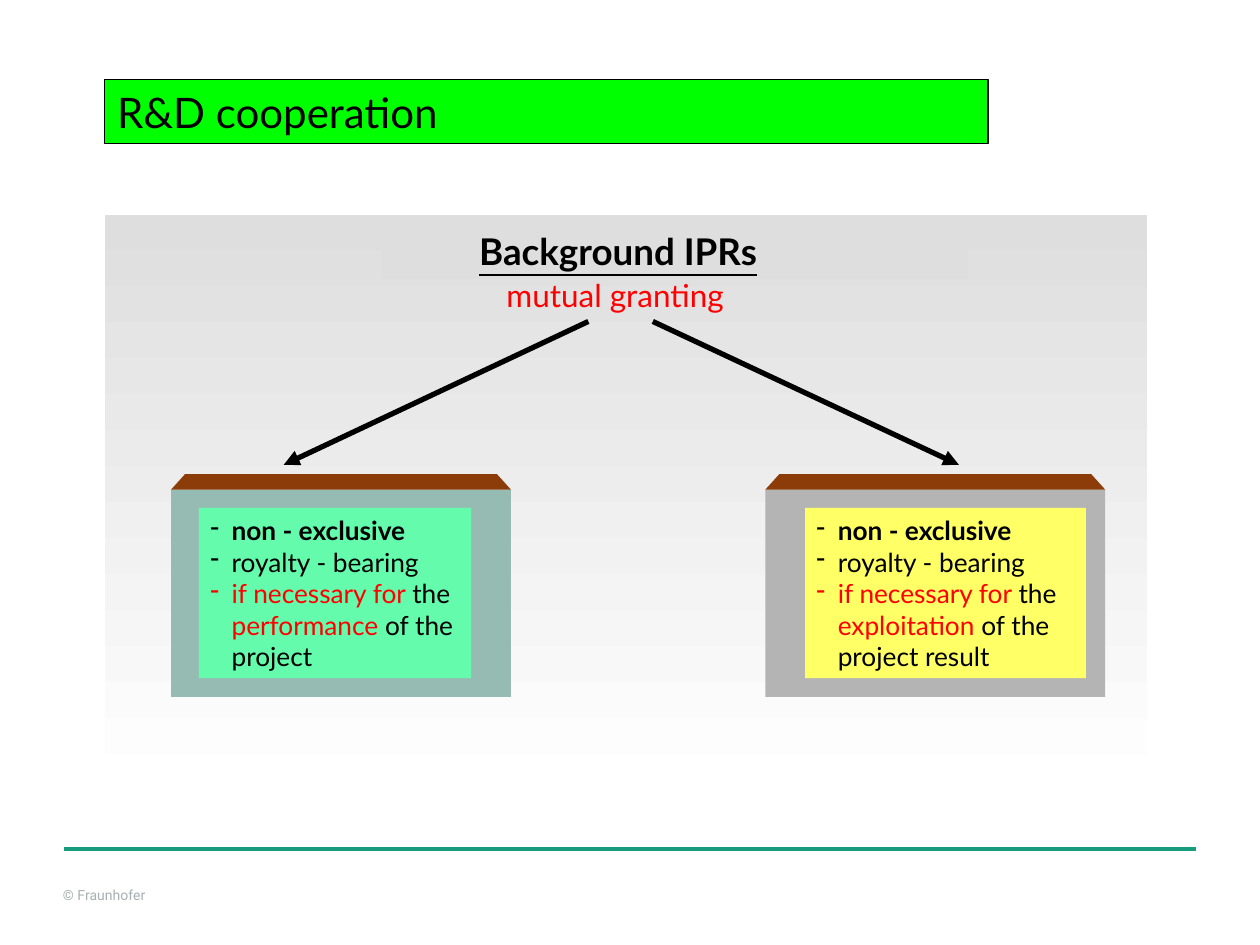
import pptx
import pptx.dml.color
import pptx.enum.shapes
import pptx.enum.text
import pptx.oxml.ns
import pptx.util
from lxml import etree
from pptx.util import Cm

COLORS = {
    "black": "000000", "red": "FF0000", "white": "FFFFFF", "panel": "DEDEDE",
    "title": "00FF00", "rule": "179C7D", "footer": "A8AFAF", "lid": "8B3C08",
    "performance box": "96BBB3", "performance note": "64FCAC",
    "exploitation box": "B4B4B4", "exploitation note": "FFFF66",
}
LID_HEIGHT = 0.31


def rgb(name):
    return pptx.dml.color.RGBColor.from_string(COLORS[name])


def add_child(parent, tag, **attributes):
    return etree.SubElement(parent, pptx.oxml.ns.qn(tag), attributes)


def paint(shape, fill, line=None, line_width=0.75):
    shape.shadow.inherit = False
    shape.fill.solid()
    shape.fill.fore_color.rgb = rgb(fill)
    if line:
        shape.line.color.rgb = rgb(line)
        shape.line.width = pptx.util.Pt(line_width)
    else:
        shape.line.fill.background()


def add_box(slide, left, top, width, height, fill, **outline):
    box = slide.shapes.add_shape(
        pptx.enum.shapes.MSO_SHAPE.RECTANGLE,
        Cm(left), Cm(top), Cm(width), Cm(height))
    paint(box, fill, **outline)
    return box


def add_text_box(slide, left, top, width, height):
    return slide.shapes.add_textbox(Cm(left), Cm(top), Cm(width), Cm(height))


def set_frame(shape, inset_x, inset_y, inset_left=None, wrap=True):
    frame = shape.text_frame
    frame.word_wrap = wrap
    frame.vertical_anchor = pptx.enum.text.MSO_ANCHOR.MIDDLE
    frame.margin_left = Cm(inset_x if inset_left is None else inset_left)
    frame.margin_right = Cm(inset_x)
    frame.margin_top = frame.margin_bottom = Cm(inset_y)
    return frame


def write(paragraph, text, size, color="black", font="Lato", bold=False,
          underline=False):
    paragraph.alignment = pptx.enum.text.PP_ALIGN.LEFT
    run = paragraph.add_run()
    run.text = text
    run.font.size = pptx.util.Pt(size)
    run.font.name = font
    run.font.color.rgb = rgb(color)
    run.font.bold = bold
    run.font.underline = underline


def add_line(slide, start, end, color, width, arrow=False):
    line = slide.shapes.add_connector(
        pptx.enum.shapes.MSO_CONNECTOR.STRAIGHT,
        *(Cm(value) for value in (*start, *end)))
    line.line.color.rgb = rgb(color)
    line.line.width = pptx.util.Pt(width)
    if arrow:
        add_child(line.line._get_or_add_ln(), "a:tailEnd", type="triangle")
    add_child(line._element.spPr, "a:effectLst")


def add_panel(slide):
    panel = add_box(slide, 2.11, 4.32, 21.03, 11.61, "panel",
                    line="white", line_width=1)
    panel.fill.gradient()
    panel.fill.gradient_angle = 270
    for stop, color in zip(panel.fill.gradient_stops, ("panel", "white")):
        stop.color.rgb = rgb(color)


def add_lidded_box(slide, left, fill):
    """Draw a box body with a bevelled lid on top of it."""
    top, width, height, bevel = 9.87, 6.85, 4.18, 0.28
    add_box(slide, left, top, width, height, fill)
    right, lid_top = left + width, top - LID_HEIGHT
    builder = slide.shapes.build_freeform(Cm(left), Cm(top))
    builder.add_line_segments([
        (Cm(left + bevel), Cm(lid_top)), (Cm(right - bevel), Cm(lid_top)),
        (Cm(right), Cm(top))])
    paint(builder.convert_to_shape(), "lid")


def add_conditions(slide, left, width, fill, purpose, subject):
    """List the licence conditions for one purpose as dashed items."""
    note = add_box(slide, left, 10.24, width, 3.43, fill)
    frame = set_frame(note, 0.23, 0.1)
    items = [
        [("non - exclusive", {"bold": True})],
        [("royalty - bearing", {})],
        [("if necessary for ", {"color": "red"}), ("the ", {}),
         (purpose, {"color": "red"}), (f" of the {subject}", {})],
    ]
    for index, item in enumerate(items):
        paragraph = frame.add_paragraph() if index else frame.paragraphs[0]
        properties = paragraph._p.get_or_add_pPr()
        properties.set("marL", str(Cm(0.43)))
        properties.set("indent", str(-Cm(0.43)))
        add_child(properties, "a:buChar", char="-")
        for text, style in item:
            write(paragraph, text, 15, **style)


def main():
    presentation = pptx.Presentation()
    presentation.slide_width, presentation.slide_height = Cm(25.4), Cm(19.05)
    slide = presentation.slides.add_slide(presentation.slide_layouts[6])

    footer = set_frame(add_text_box(slide, 1.27, 17.88, 2.49, 0.33), 0, 0, wrap=False)
    write(footer.paragraphs[0], "© Fraunhofer", 8, "footer", "Roboto")
    add_line(slide, (1.3, 17.12), (24.1, 17.12), "rule", 2.5)

    add_panel(slide)
    add_line(slide, (11.86, 6.48), (5.72, 9.37), "black", 3, arrow=True)
    add_line(slide, (13.16, 6.48), (19.33, 9.37), "black", 3, arrow=True)

    heading = set_frame(add_box(slide, 7.7, 4.5, 11.81, 1.12, "panel"),
                        0.23, 0.1, inset_left=1.96)
    write(heading.paragraphs[0], "Background IPRs", 21, bold=True, underline=True)
    granting = set_frame(add_text_box(slide, 9.96, 5.44, 5.49, 1.02),
                         0.25, 0.13, wrap=False)
    write(granting.paragraphs[0], "mutual granting", 18, "red")

    for purpose, subject, box_left, note_left, note_width in (
            ("performance", "project", 3.45, 4.01, 5.49),
            ("exploitation", "project result", 15.43, 16.23, 5.66)):
        add_lidded_box(slide, box_left, f"{purpose} box")
        add_conditions(slide, note_left, note_width, f"{purpose} note",
                       purpose, subject)

    title = set_frame(add_box(slide, 2.11, 1.6, 17.81, 1.3, "title", line="black"),
                      0.25, 0.13)
    write(title.paragraphs[0], "R&D cooperation", 24)

    presentation.save("out.pptx")


if __name__ == "__main__":
    main()
